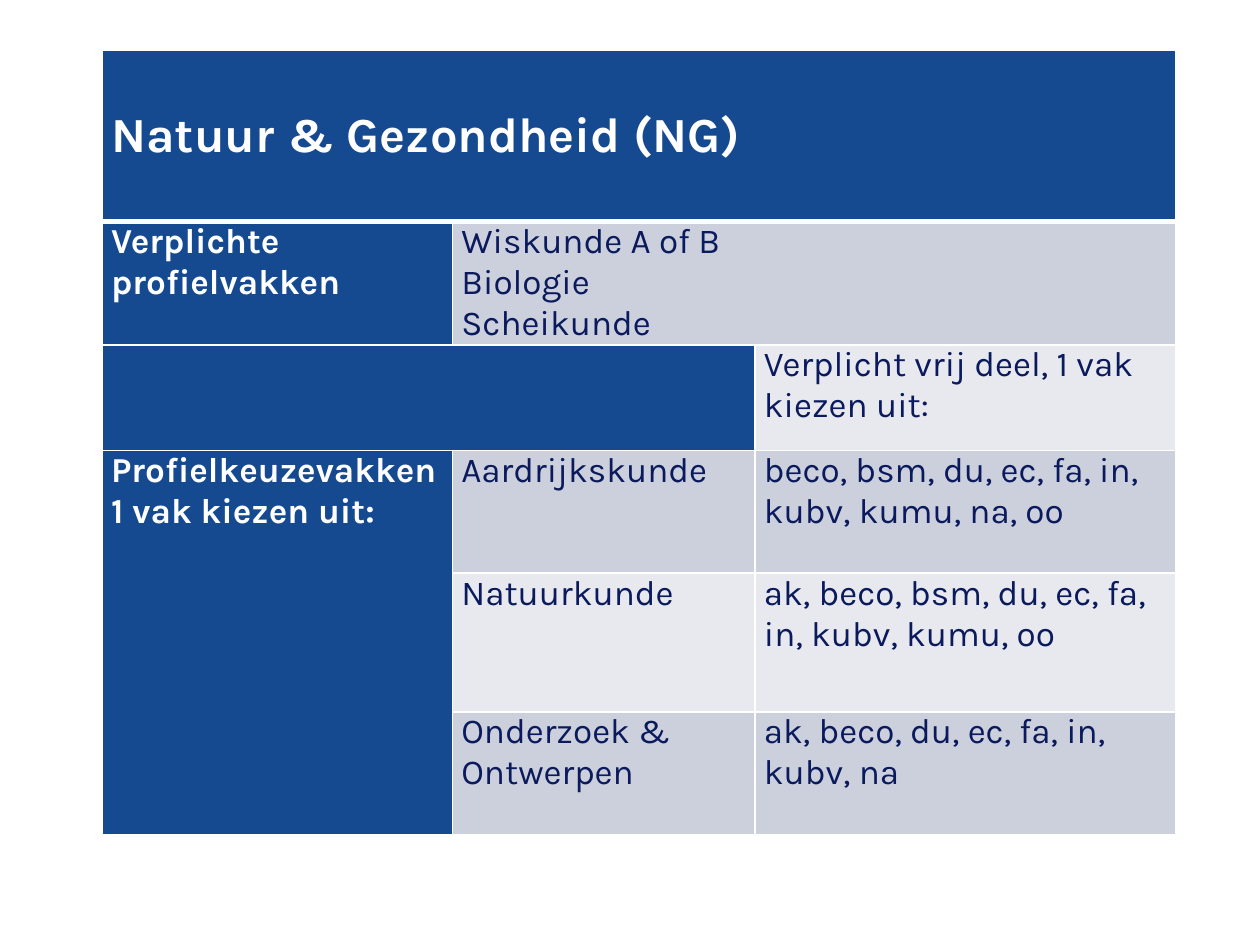
import pptx
import pptx.dml.color
import pptx.enum.text
import pptx.oxml.ns
import pptx.util
from lxml import etree

Cm = pptx.util.Cm
BLUE, NAVY, WHITE = "154A91", "0A1A5C", "FFFFFF"
DARK_BAND, LIGHT_BAND = "CCD0DC", "E8E9EE"


def colour(code):
    return pptx.dml.color.RGBColor.from_string(code)


class SlideBuilder:
    font = "Karla"

    def __init__(self, slide):
        self.slide = slide

    def table(self, left, top, columns, rows):
        frame = self.slide.shapes.add_table(
            len(rows), len(columns), Cm(left), Cm(top), Cm(sum(columns)), Cm(sum(rows)))
        table = frame.table
        table.first_row = table.horz_banding = False
        for column, width in zip(table.columns, columns):
            column.width = Cm(width)
        for row, height in zip(table.rows, rows):
            row.height = Cm(height)
        return table

    def border(self, cell, side, width):
        qn = pptx.oxml.ns.qn
        line = etree.SubElement(cell._tc.get_or_add_tcPr(), qn(f"a:ln{side}"),
                                w=str(pptx.util.Pt(width)))
        fill = etree.SubElement(line, qn("a:solidFill"))
        etree.SubElement(fill, qn("a:srgbClr"), val=WHITE)

    def cell(self, cell, fill, top_width=1, bottom_width=1):
        for side, width in zip("LRTB", (1, 1, top_width, bottom_width)):
            self.border(cell, side, width)
        cell.fill.solid()
        cell.fill.fore_color.rgb = colour(fill)
        cell.margin_left = cell.margin_right = Cm(0.18)
        cell.margin_top = cell.margin_bottom = 0

    def text(self, cell, lines, size=20, ink=NAVY, bold=False):
        frame = cell.text_frame
        for number, line in enumerate(lines):
            para = frame.add_paragraph() if number else frame.paragraphs[0]
            span = para.add_run()
            span.text = line
            span.font.name = self.font
            span.font.size = pptx.util.Pt(size)
            span.font.bold = bold
            span.font.color.rgb = colour(ink)


def main():
    deck = pptx.Presentation()
    deck.slide_width, deck.slide_height = Cm(25.4), Cm(19.05)
    page = SlideBuilder(deck.slides.add_slide(deck.slide_layouts[6]))

    # Grid: every cell gets its fill and borders before merging
    fills = [
        [BLUE, BLUE, BLUE],
        [BLUE, DARK_BAND, DARK_BAND],
        [BLUE, BLUE, LIGHT_BAND],
        [BLUE, DARK_BAND, DARK_BAND],
        [BLUE, LIGHT_BAND, LIGHT_BAND],
        [BLUE, DARK_BAND, DARK_BAND],
    ]
    table = page.table(2.06, 1.02, [7.06, 6.1, 8.48],
                       [3.45, 2.48, 2.13, 2.47, 2.8, 2.47])
    for row, row_fills in enumerate(fills):
        for column, fill in enumerate(row_fills):
            page.cell(table.cell(row, column), fill,
                      top_width=3 if row == 1 else 1,
                      bottom_width=3 if row == 0 else 1)

    # Merged areas, as first and last cell
    for first, last in [((0, 0), (0, 2)), ((1, 1), (1, 2)),
                        ((2, 0), (2, 1)), ((3, 0), (5, 0))]:
        table.cell(*first).merge(table.cell(*last))

    # Title and row headings
    title = table.cell(0, 0)
    title.vertical_anchor = pptx.enum.text.MSO_ANCHOR.MIDDLE
    page.text(title, ["Natuur & Gezondheid (NG)"], 28, WHITE, True)
    for row, heading in [(1, "Verplichte profielvakken"),
                         (3, "Profielkeuzevakken 1 vak kiezen uit:")]:
        page.text(table.cell(row, 0), [heading], ink=WHITE, bold=True)

    # Required subjects
    page.text(table.cell(1, 1), ["Wiskunde A of B", "Biologie", "Scheikunde"])
    page.text(table.cell(2, 2), ["Verplicht vrij deel, 1 vak kiezen uit:"])

    # Elective subjects with their free choices
    electives = [
        ("Aardrijkskunde", "beco, bsm, du, ec, fa, in, kubv, kumu, na, oo"),
        ("Natuurkunde", "ak, beco, bsm, du, ec, fa, in, kubv, kumu, oo"),
        ("Onderzoek & Ontwerpen", "ak, beco, du, ec, fa, in, kubv, na"),
    ]
    for row, (subject, choices) in enumerate(electives, start=3):
        page.text(table.cell(row, 1), [subject])
        page.text(table.cell(row, 2), [choices])

    deck.save("out.pptx")


if __name__ == "__main__":
    main()
